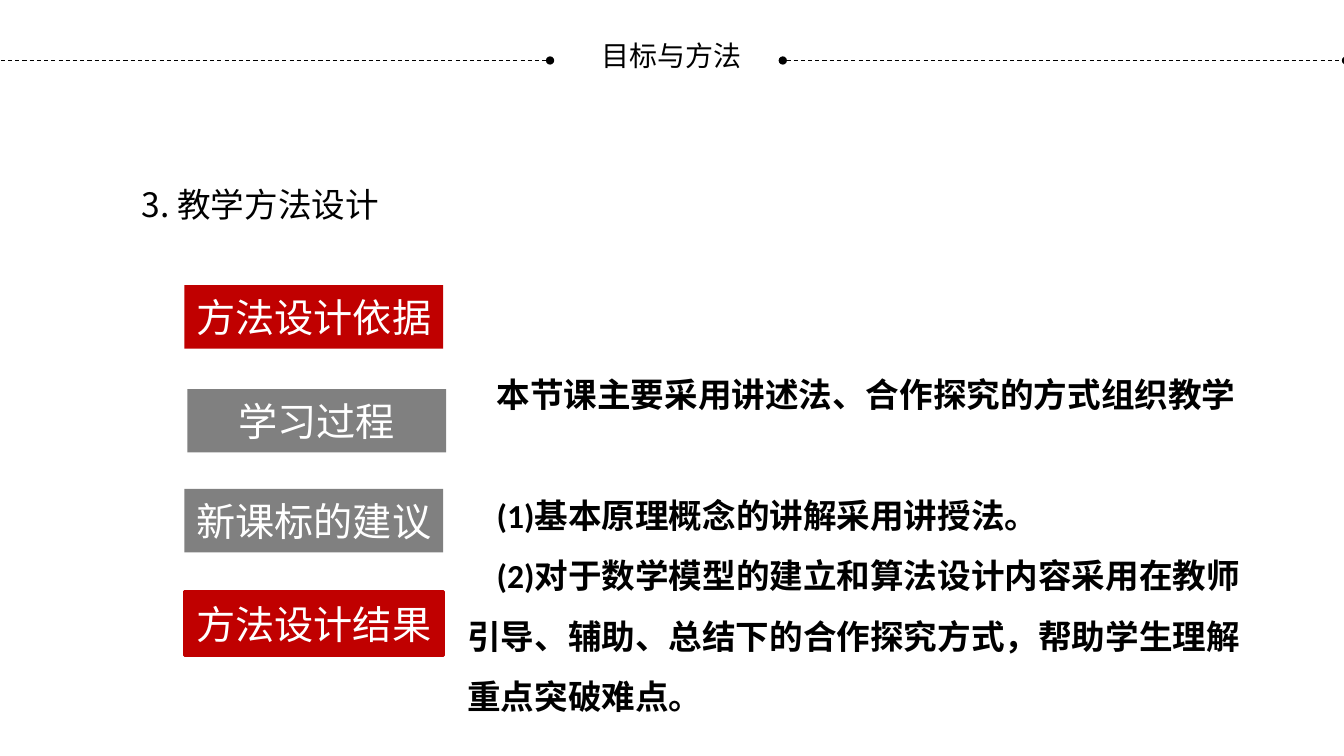
from lxml import etree
from pptx import Presentation
from pptx.dml.color import RGBColor
from pptx.enum.dml import MSO_LINE
from pptx.enum.shapes import MSO_CONNECTOR, MSO_SHAPE
from pptx.enum.text import MSO_ANCHOR, PP_ALIGN
from pptx.oxml.ns import qn
from pptx.util import Inches, Pt

CENTER, LEFT = PP_ALIGN.CENTER, PP_ALIGN.LEFT
MIDDLE, TOP = MSO_ANCHOR.MIDDLE, MSO_ANCHOR.TOP
RECTANGLE, STRAIGHT, DASH = MSO_SHAPE.RECTANGLE, MSO_CONNECTOR.STRAIGHT, MSO_LINE.DASH
NOTO = "Noto Sans CJK SC"
RED, GRAY = "C00000", "808080"


def rgb(value):
    return RGBColor.from_string(value)


def add_text(p, text, size=24, font="Calibri", color="000000", bold=False, align=LEFT):
    p.alignment = align
    r = p.add_run()
    r.text = text
    r.font.size = Pt(size)
    r.font.name = font
    r.font.bold = bold
    r.font.color.rgb = rgb(color)
    if font == NOTO:
        etree.SubElement(r.font._element, qn("a:ea"), typeface=font)


prs = Presentation()
prs.slide_width, prs.slide_height = Inches(13.34), Inches(7.5)
s = prs.slides.add_slide(prs.slide_layouts[6])

headings = [
    ("目标与方法", 5.72, 0.29, 1.89, 0.51, 20, CENTER, MIDDLE),
    ("3. 教学方法设计", 1.31, 1.78, 7.32, 0.78, 24, LEFT, TOP),
]
for text, x, y, w, h, size, align, anchor in headings:
    tf = s.shapes.add_textbox(Inches(x), Inches(y), Inches(w), Inches(h)).text_frame
    tf.word_wrap = True
    tf.vertical_anchor = anchor
    add_text(tf.paragraphs[0], text, size=size, font=NOTO, align=align)

for x1, x2 in [(-0.1, 5.46), (7.77, 13.36)]:
    line = s.shapes.add_connector(STRAIGHT, Inches(x1), Inches(0.6), Inches(x2), Inches(0.6))
    line.line.color.rgb = rgb("000000")
    line.line.width = Pt(0.75)
    line.line.dash_style = DASH
    ln = line.line._get_or_add_ln()
    for end in ("a:headEnd", "a:tailEnd"):
        etree.SubElement(ln, qn(end), type="oval")
    etree.SubElement(line._element.spPr, qn("a:effectLst"))

labels = [
    ("方法设计依据", 1.83, 2.83, RED, False),
    ("学习过程", 1.86, 3.86, GRAY, False),
    ("新课标的建议", 1.83, 4.85, GRAY, False),
    ("方法设计结果", 1.83, 5.87, RED, True),
]
for text, x, y, color, outlined in labels:
    sp = s.shapes.add_shape(RECTANGLE, Inches(x), Inches(y), Inches(2.57), Inches(0.63))
    sp.shadow.inherit = False
    sp.fill.solid()
    sp.fill.fore_color.rgb = rgb(color)
    if outlined:
        sp.line.color.rgb = rgb(color)
        sp.line.width = Pt(2)
    else:
        sp.line.fill.background()
    tf = sp.text_frame
    tf.word_wrap = True
    tf.vertical_anchor = MIDDLE
    add_text(tf.paragraphs[0], text, size=28, color="FFFFFF", align=CENTER)

methods = [
    ("本节课主要采用讲述法、合作探究的方式组织教学", 0),
    ("(1)基本原理概念的讲解采用讲授法。", 43),
    ("(2)对于数学模型的建立和算法设计内容采用在教师引导、辅助、总结下的合作探究方式，帮助学生理解重点突破难点。", 0),
]
tf = s.shapes.add_textbox(Inches(4.54), Inches(3.46), Inches(7.95), Inches(3.13)).text_frame
tf.word_wrap = True
for i, (text, before) in enumerate(methods):
    p = tf.add_paragraph() if i else tf.paragraphs[0]
    p.line_spacing = 1.5
    p.space_before = Pt(before)
    p._p.get_or_add_pPr().set("indent", str(Inches(0.29)))
    add_text(p, text, bold=True)

prs.save("out.pptx")
